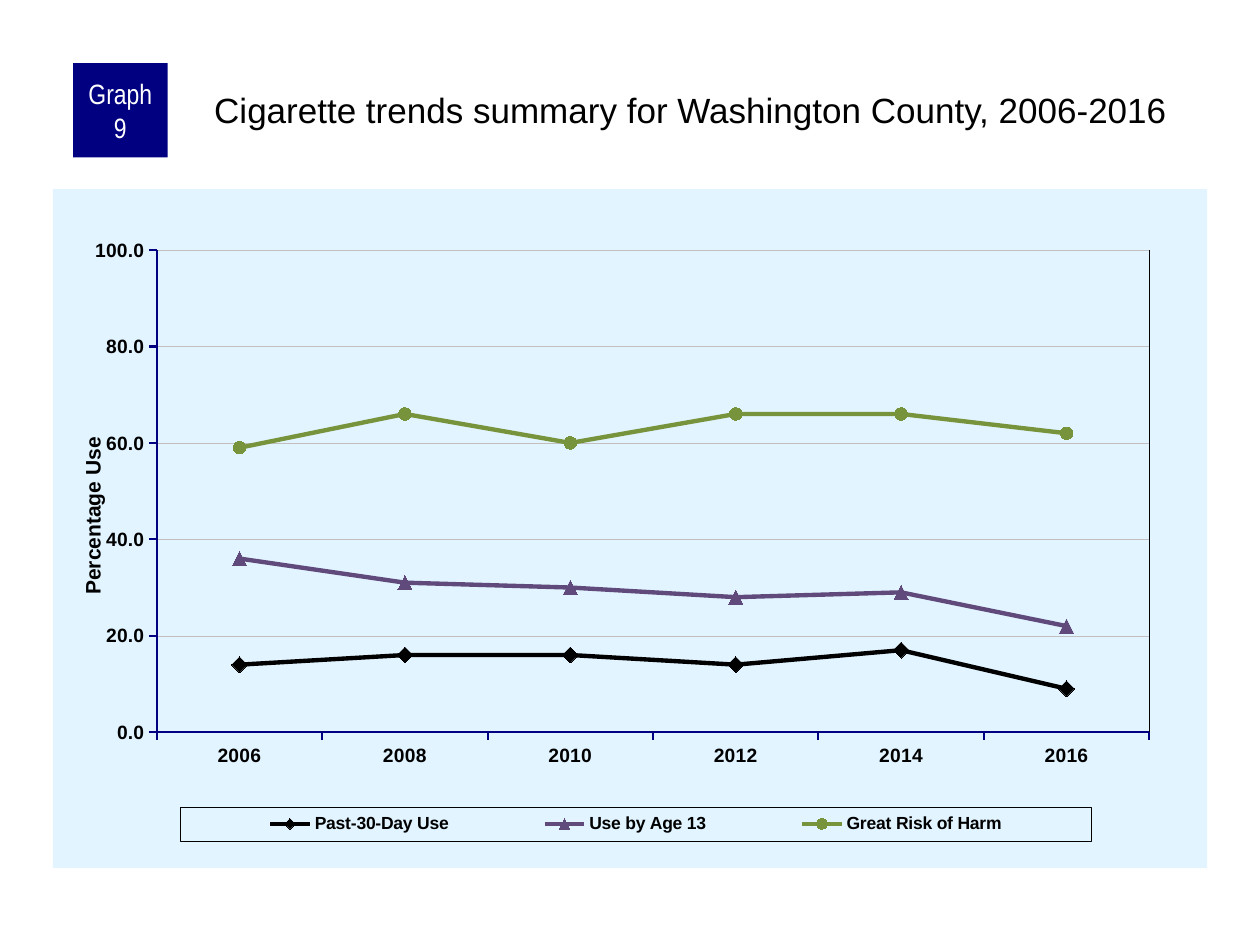
from typing import NamedTuple

import lxml.etree
import pptx
import pptx.chart.data
import pptx.dml.color
import pptx.enum.chart
import pptx.enum.shapes
import pptx.enum.text
import pptx.oxml
import pptx.oxml.ns
import pptx.util

RGBColor = pptx.dml.color.RGBColor
Marker = pptx.enum.chart.XL_MARKER_STYLE
qn = pptx.oxml.ns.qn

WIDTH, HEIGHT = pptx.util.Inches(10), pptx.util.Inches(7.5)
NAVY = RGBColor(0x00, 0x00, 0x80)
WHITE = RGBColor(0xFF, 0xFF, 0xFF)
BLACK = RGBColor(0x00, 0x00, 0x00)
GRID_GREY = RGBColor(0xC0, 0xC0, 0xC0)
PANEL_BLUE = RGBColor(0xE1, 0xF4, 0xFF)
PURPLE = RGBColor(0x60, 0x4A, 0x7B)
GREEN = RGBColor(0x77, 0x93, 0x3C)
YEARS = [str(year) for year in range(2006, 2017, 2)]


class Area(NamedTuple):
    """A rectangle in inches on the slide, or in shares of the chart."""
    left: float
    top: float
    width: float
    height: float

    def inches(self) -> list:
        return [pptx.util.Inches(length) for length in self]


class Trend(NamedTuple):
    name: str
    values: tuple
    color: RGBColor
    marker: Marker
    marker_size: int


TRENDS = [
    Trend("Past-30-Day Use", (14, 16, 16, 14, 17, 9), BLACK, Marker.DIAMOND, 9),
    Trend("Use by Age 13", (36, 31, 30, 28, 29, 22), PURPLE, Marker.TRIANGLE, 8),
    Trend("Great Risk of Harm", (59, 66, 60, 66, 66, 62), GREEN, Marker.CIRCLE, 7),
]
BADGE = Area(0.58, 0.5, 0.75, 0.75)
TITLE = Area(1.67, 0.67, 7.92, 0.83)
PANEL = Area(0.42, 1.5, 9.16, 5.39)
PLOT = Area(0.09, 0.09, 0.86, 0.71)
LEGEND = Area(0.11, 0.91, 0.79, 0.05)


def style_font(font, size: float, color: RGBColor, name: str = "Arial",
               bold: bool = False) -> None:
    font.size, font.name, font.bold = pptx.util.Pt(size), name, bold
    font.color.rgb = color


def style_line(line, color: RGBColor, width: float) -> None:
    line.color.rgb = color
    line.width = pptx.util.Pt(width)


def write_text(box, text: str, insets: tuple, size: float, color: RGBColor, name: str):
    frame = box.text_frame
    frame.word_wrap = True
    (frame.margin_left, frame.margin_top, frame.margin_right,
     frame.margin_bottom) = map(pptx.util.Inches, insets)
    para = frame.paragraphs[0]
    para.text = text
    style_font(para.font, size, color, name)
    return para


def add_badge(page) -> None:
    box = page.shapes.add_shape(pptx.enum.shapes.MSO_SHAPE.RECTANGLE, *BADGE.inches())
    box.shadow.inherit = False
    box.fill.solid()
    box.fill.fore_color.rgb = NAVY
    box.line.fill.background()
    box.text_frame.vertical_anchor = pptx.enum.text.MSO_ANCHOR.MIDDLE
    para = write_text(box, "Graph 9", (0.05, 0, 0.05, 0), 16, WHITE, "Arial Narrow")
    para.alignment = pptx.enum.text.PP_ALIGN.CENTER


def place(element, after: str, **settings) -> None:
    """Give a chart element a manual layout behind its child named after, or first."""
    for old in element.findall(qn("c:layout")):
        element.remove(old)
    layout = lxml.etree.Element(qn("c:layout"))
    manual = lxml.etree.SubElement(layout, qn("c:manualLayout"))
    for tag, value in settings.items():
        lxml.etree.SubElement(manual, qn(f"c:{tag}")).set("val", str(value))
    element.insert(element.index(element.find(qn(after))) + 1 if after else 0, layout)


def shape_properties(content: str):
    return pptx.oxml.parse_xml(
        f'<c:spPr {pptx.oxml.ns.nsdecls("c", "a")}>{content}</c:spPr>')


def solid_fill(color: RGBColor) -> str:
    return f'<a:solidFill><a:srgbClr val="{color}"/></a:solidFill>'


def style_axes(chart) -> None:
    for axis in (chart.category_axis, chart.value_axis):
        axis.major_tick_mark = pptx.enum.chart.XL_TICK_MARK.OUTSIDE
        axis.minor_tick_mark = pptx.enum.chart.XL_TICK_MARK.NONE
        style_font(axis.tick_labels.font, 11, BLACK, bold=True)
        style_line(axis.format.line, NAVY, 1.25)
    values = chart.value_axis
    values.minimum_scale, values.maximum_scale, values.major_unit = 0, 100, 20
    values.tick_labels.number_format = "0.0"
    values.tick_labels.number_format_is_linked = False
    values.has_major_gridlines = True
    style_line(values.major_gridlines.format.line, GRID_GREY, 0.25)
    para = values.axis_title.text_frame.paragraphs[0]
    para.text = "Percentage Use"
    style_font(para.font, 12, BLACK, bold=True)


def style_trend(series, trend: Trend) -> None:
    series.smooth = False
    style_line(series.format.line, trend.color, 2.5)
    series.marker.style, series.marker.size = trend.marker, trend.marker_size
    series.marker.format.fill.solid()
    series.marker.format.fill.fore_color.rgb = trend.color
    style_line(series.marker.format.line, trend.color, 0.75)


def arrange_chart(space) -> None:
    """Fill the panel, frame the legend and place plot, legend and axis title."""
    plot, legend, title = (space.find(f".//{qn(tag)}")
                           for tag in ("c:plotArea", "c:legend", "c:title"))
    space.find(qn("c:chart")).addnext(
        shape_properties(f"{solid_fill(PANEL_BLUE)}<a:ln><a:noFill/></a:ln>"))
    legend.find(qn("c:txPr")).addprevious(
        shape_properties(f'<a:ln w="3175">{solid_fill(BLACK)}</a:ln>'))
    edges = {"xMode": "edge", "yMode": "edge"}
    place(plot, "", layoutTarget="inner", **edges,
          x=PLOT.left, y=PLOT.top, w=PLOT.width, h=PLOT.height)
    place(legend, "c:legendPos", **edges,
          x=LEGEND.left, y=LEGEND.top, w=LEGEND.width, h=LEGEND.height)
    place(title, "c:tx", **edges, x=0.02, y=0.36)


def add_trend_chart(page) -> None:
    data = pptx.chart.data.CategoryChartData(number_format="0.0")
    data.categories = YEARS
    for trend in TRENDS:
        data.add_series(trend.name, trend.values)
    chart = page.shapes.add_chart(pptx.enum.chart.XL_CHART_TYPE.LINE_MARKERS,
                                  *PANEL.inches(), data).chart
    chart.has_title = False
    style_font(chart.font, 8, BLACK)
    chart.plots[0].vary_by_categories = False
    style_axes(chart)
    for series, trend in zip(chart.plots[0].series, TRENDS):
        style_trend(series, trend)
    chart.has_legend = True
    chart.legend.position = pptx.enum.chart.XL_LEGEND_POSITION.RIGHT
    chart.legend.include_in_layout = False
    style_font(chart.legend.font, 10, BLACK, bold=True)
    arrange_chart(chart._chartSpace)


def add_plot_edge(page) -> None:
    """Close the plot on its right side with a thin line."""
    x = pptx.util.Inches(PANEL.left + PANEL.width * (PLOT.left + PLOT.width))
    top = pptx.util.Inches(PANEL.top + PANEL.height * PLOT.top)
    bottom = top + pptx.util.Inches(PANEL.height * PLOT.height)
    edge = page.shapes.add_connector(pptx.enum.shapes.MSO_CONNECTOR.STRAIGHT,
                                     x, top, x, bottom)
    style_line(edge.line, BLACK, 0.25)
    lxml.etree.SubElement(edge._element.spPr, qn("a:effectLst"))


def main() -> None:
    deck = pptx.Presentation()
    deck.slide_width, deck.slide_height = WIDTH, HEIGHT
    page = deck.slides.add_slide(deck.slide_layouts[6])
    add_badge(page)
    write_text(page.shapes.add_textbox(*TITLE.inches()),
               "Cigarette trends summary for Washington County, 2006-2016",
               (0.03, 0.03, 0, 0), 20, BLACK, "Arial")
    add_trend_chart(page)
    add_plot_edge(page)
    deck.save("out.pptx")


if __name__ == "__main__":
    main()
